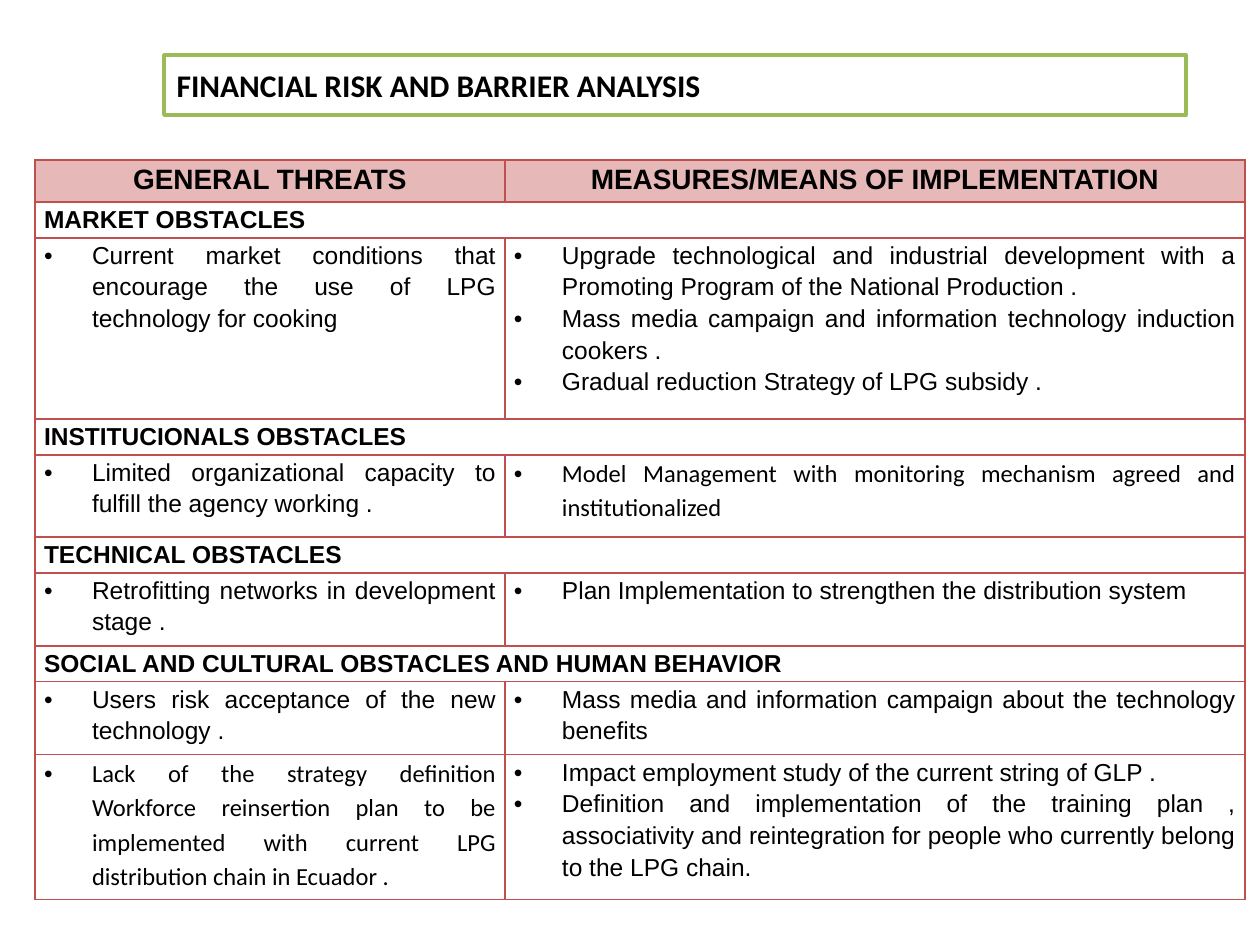
from dataclasses import dataclass

from lxml import etree
from pptx import Presentation
from pptx.dml.color import RGBColor
from pptx.enum.text import MSO_ANCHOR, MSO_AUTO_SIZE, PP_ALIGN
from pptx.oxml.ns import qn
from pptx.util import Emu, Pt

LEFT, CENTER, JUSTIFY = PP_ALIGN.LEFT, PP_ALIGN.CENTER, PP_ALIGN.JUSTIFY
MIDDLE, TOP = MSO_ANCHOR.MIDDLE, MSO_ANCHOR.TOP
NO_AUTOFIT = MSO_AUTO_SIZE.NONE


@dataclass(frozen=True)
class Theme:
    text: RGBColor = RGBColor(0x00, 0x00, 0x00)
    paper: RGBColor = RGBColor(0xFF, 0xFF, 0xFF)
    frame: RGBColor = RGBColor(0x9B, 0xBB, 0x59)
    header: RGBColor = RGBColor(0xE6, 0xB9, 0xB8)
    border: str = "C0504D"
    title_font: str = "Calibri"
    table_font: str = "Arial"
    title_size: int = 18
    header_size: int = 16
    body_size: int = 14


theme = Theme()
EMU_PER_PX = 914400 / 126
INDENT = 48
LINE_SPACING = 1.15


def px(length):
    return Emu(round(length * EMU_PER_PX))


def write_cell(cell, texts, alignment, size, font_name, bold, bulleted):
    cell.margin_left = cell.margin_right = px(9)
    cell.margin_top = cell.margin_bottom = 0
    cell.vertical_anchor = TOP
    for index, text in enumerate(texts):
        frame = cell.text_frame
        paragraph = frame.paragraphs[0] if index == 0 else frame.add_paragraph()
        paragraph.text = text
        paragraph.alignment = alignment
        paragraph.line_spacing = LINE_SPACING
        if bulleted:
            properties = paragraph._p.get_or_add_pPr()
            properties.set("marL", str(px(INDENT)))
            properties.set("indent", str(px(-INDENT)))
            etree.SubElement(properties, qn("a:buFont"), typeface="Arial")
            etree.SubElement(properties, qn("a:buChar"), char="•")
        paragraph.font.name = font_name
        paragraph.font.size = Pt(size)
        paragraph.font.bold = bold
        paragraph.font.color.rgb = theme.text


presentation = Presentation()
presentation.slide_width, presentation.slide_height = px(1260), px(945)
slide = presentation.slides.add_slide(presentation.slide_layouts[5])

# Title in a rounded frame
title = slide.shapes.title
title.left, title.top, title.width, title.height = px(164), px(55), px(1022), px(60)
geometry = etree.SubElement(title._element.spPr, qn("a:prstGeom"), prst="roundRect")
etree.SubElement(geometry, qn("a:avLst"))
title.fill.solid()
title.fill.fore_color.rgb = theme.paper
title.line.color.rgb = theme.frame
title.line.width = Pt(2)
title.text_frame.auto_size = NO_AUTOFIT
title.text_frame.word_wrap = True
title.text_frame.vertical_anchor = MIDDLE
paragraph = title.text_frame.paragraphs[0]
paragraph.text = "FINANCIAL RISK AND BARRIER ANALYSIS"
paragraph.alignment = LEFT
paragraph.font.name = theme.title_font
paragraph.font.size = Pt(theme.title_size)
paragraph.font.bold = True
paragraph.font.color.rgb = theme.text

# Table rows: (height, cells); a single string spans both columns as a section
rows = [
    (42, ("GENERAL THREATS", "MEASURES/MEANS OF IMPLEMENTATION")),
    (36, "MARKET OBSTACLES"),
    (181, (
        ["Current market conditions that encourage the use of LPG technology for cooking"],
        ["Upgrade technological and industrial development with a Promoting Program "
         "of the National Production .",
         "Mass media campaign and information technology induction cookers .",
         "Gradual reduction Strategy of LPG subsidy ."])),
    (36, "INSTITUCIONALS OBSTACLES"),
    (82, (
        ["Limited organizational capacity to fulfill the agency working ."],
        ["Model Management with monitoring mechanism agreed and institutionalized"])),
    (36, "TECHNICAL OBSTACLES"),
    (73, (
        ["Retrofitting networks in development stage ."],
        ["Plan Implementation to strengthen the distribution system "])),
    (36, "SOCIAL AND CULTURAL OBSTACLES AND HUMAN BEHAVIOR"),
    (73, (
        ["Users risk acceptance of the new technology ."],
        ["Mass media and information campaign about the technology benefits"])),
    (145, (
        ["Lack of the strategy definition Workforce reinsertion plan to be implemented "
         "with current LPG distribution chain in Ecuador ."],
        ["Impact employment study of the current string of GLP . ",
         "Definition and implementation of the training plan , associativity and "
         "reintegration for people who currently belong to the LPG chain.\u00a0"])),
]
column_widths = [470, 740]
calibri_cells = {(4, 1), (9, 0)}

table = slide.shapes.add_table(
    len(rows), len(column_widths), px(35), px(160),
    px(sum(column_widths)), px(sum(height for height, _ in rows))).table
table.first_row = table.horz_banding = False
for column, width in zip(table.columns, column_widths):
    column.width = px(width)

# Borders and fills
for row_index, (height, _) in enumerate(rows):
    table.rows[row_index].height = px(height)
    for cell in table.rows[row_index].cells:
        cell_properties = cell._tc.get_or_add_tcPr()
        for side in ("a:lnL", "a:lnR", "a:lnT", "a:lnB"):
            line = etree.SubElement(cell_properties, qn(side), w=str(Pt(1)))
            fill = etree.SubElement(line, qn("a:solidFill"))
            etree.SubElement(fill, qn("a:srgbClr"), val=theme.border)
        if row_index == 0:
            cell.fill.solid()
            cell.fill.fore_color.rgb = theme.header
        else:
            cell.fill.background()

# Header, section and bulleted text
for row_index, (_, content) in enumerate(rows):
    if isinstance(content, str):
        section = table.cell(row_index, 0)
        section.merge(table.cell(row_index, 1))
        write_cell(section, [content], LEFT, theme.body_size, theme.table_font, True, False)
        continue
    for column_index, texts in enumerate(content):
        cell = table.cell(row_index, column_index)
        if row_index == 0:
            write_cell(cell, [texts], CENTER, theme.header_size, theme.table_font, True, False)
        else:
            in_calibri = (row_index, column_index) in calibri_cells
            font_name = theme.title_font if in_calibri else theme.table_font
            write_cell(cell, texts, JUSTIFY, theme.body_size, font_name, False, True)

presentation.save("out.pptx")
